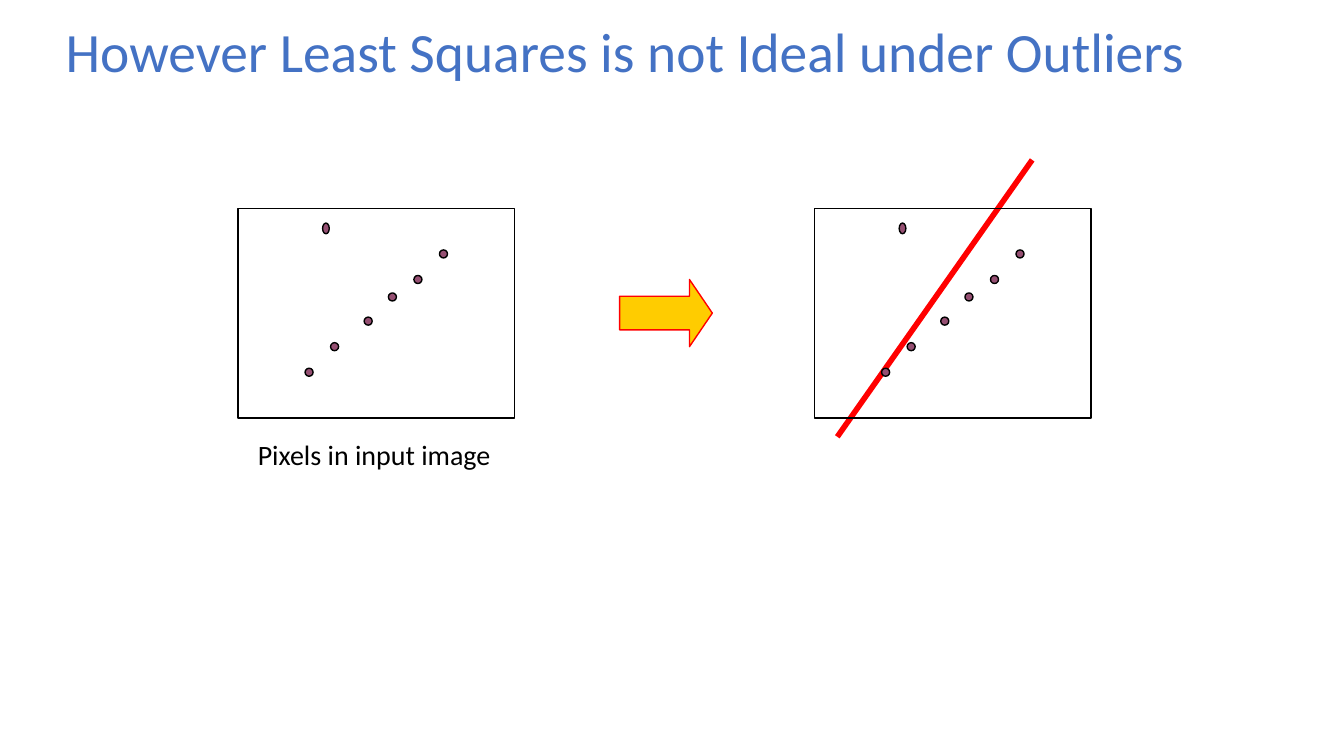
from lxml import etree
from pptx import Presentation
from pptx import util as u
from pptx.dml.color import RGBColor
from pptx.enum import shapes, text
from pptx.oxml.ns import qn

BLUE = RGBColor(0x44, 0x72, 0xC4)
BLACK = RGBColor(0x00, 0x00, 0x00)
RED = RGBColor(0xFF, 0x00, 0x00)
GOLD = RGBColor(0xFF, 0xCC, 0x00)
PLUM = RGBColor(0x95, 0x4F, 0x72)

# Widescreen slide, 16:9
prs = Presentation()
prs.slide_width = u.Inches(10)
prs.slide_height = u.Inches(10 * 9 / 16)
s = prs.slides.add_slide(prs.slide_layouts[6])


def add_shape(kind, x, y, w, h, fill=None, line=BLACK):
    sp = s.shapes.add_shape(kind, u.Inches(x), u.Inches(y), u.Inches(w), u.Inches(h))
    sp.shadow.inherit = False
    if fill is None:
        sp.fill.background()
    else:
        sp.fill.solid()
        sp.fill.fore_color.rgb = fill
    sp.line.color.rgb = line
    sp.line.width = u.Pt(0.75)
    return sp


def add_text(words, x, y, w, h, size, color):
    tb = s.shapes.add_textbox(u.Inches(x), u.Inches(y), u.Inches(w), u.Inches(h))
    tf = tb.text_frame
    p = tf.paragraphs[0]
    r = p.add_run()
    r.text = words
    r.font.name, r.font.size, r.font.color.rgb = "Calibri", u.Pt(size), color
    return tf


# Title
tf = add_text("However Least Squares is not Ideal under Outliers",
              0.39, -0.14, 8.62, 1.09, 29.7, BLUE)
tf.word_wrap = True
tf.vertical_anchor = text.MSO_ANCHOR.MIDDLE
tf.paragraphs[0].line_spacing = 0.9

# Fitted line, pulled away from the points by the outlier
fit = s.shapes.add_connector(shapes.MSO_CONNECTOR.STRAIGHT, u.Inches(6.23), u.Inches(3.25),
                             u.Inches(7.68), u.Inches(1.19))
fit.line.color.rgb = RED
fit.line.width = u.Pt(3)
etree.SubElement(fit._element.spPr, qn("a:effectLst"))

# Input and result frames with the same points, offsets from the frame corner
FRAME_TOP = 1.55
INLIERS = [(0.5, 1.19), (0.69, 1), (0.94, 0.81), (1.12, 0.63), (1.31, 0.5), (1.5, 0.31)]
for left in (1.77, 6.06):
    add_shape(shapes.MSO_SHAPE.RECTANGLE, left, FRAME_TOP, 2.06, 1.56)
    for dx, dy in INLIERS:
        add_shape(shapes.MSO_SHAPE.OVAL, left + dx, FRAME_TOP + dy, 0.06, 0.06, PLUM)
    # Outlier
    add_shape(shapes.MSO_SHAPE.OVAL, left + 0.63, FRAME_TOP + 0.11, 0.05, 0.08, PLUM)

# Arrow from input to result
arrow = add_shape(shapes.MSO_SHAPE.RIGHT_ARROW, 4.61, 2.08, 0.69, 0.5, GOLD, RED)
arrow.adjustments[1] = 0.34

# Caption
tf = add_text("Pixels in input image", 1.82, 3.21, 1.96, 0.35, 15, BLACK)
tf.word_wrap = False
tf.auto_size = text.MSO_AUTO_SIZE.SHAPE_TO_FIT_TEXT

prs.save("out.pptx")
